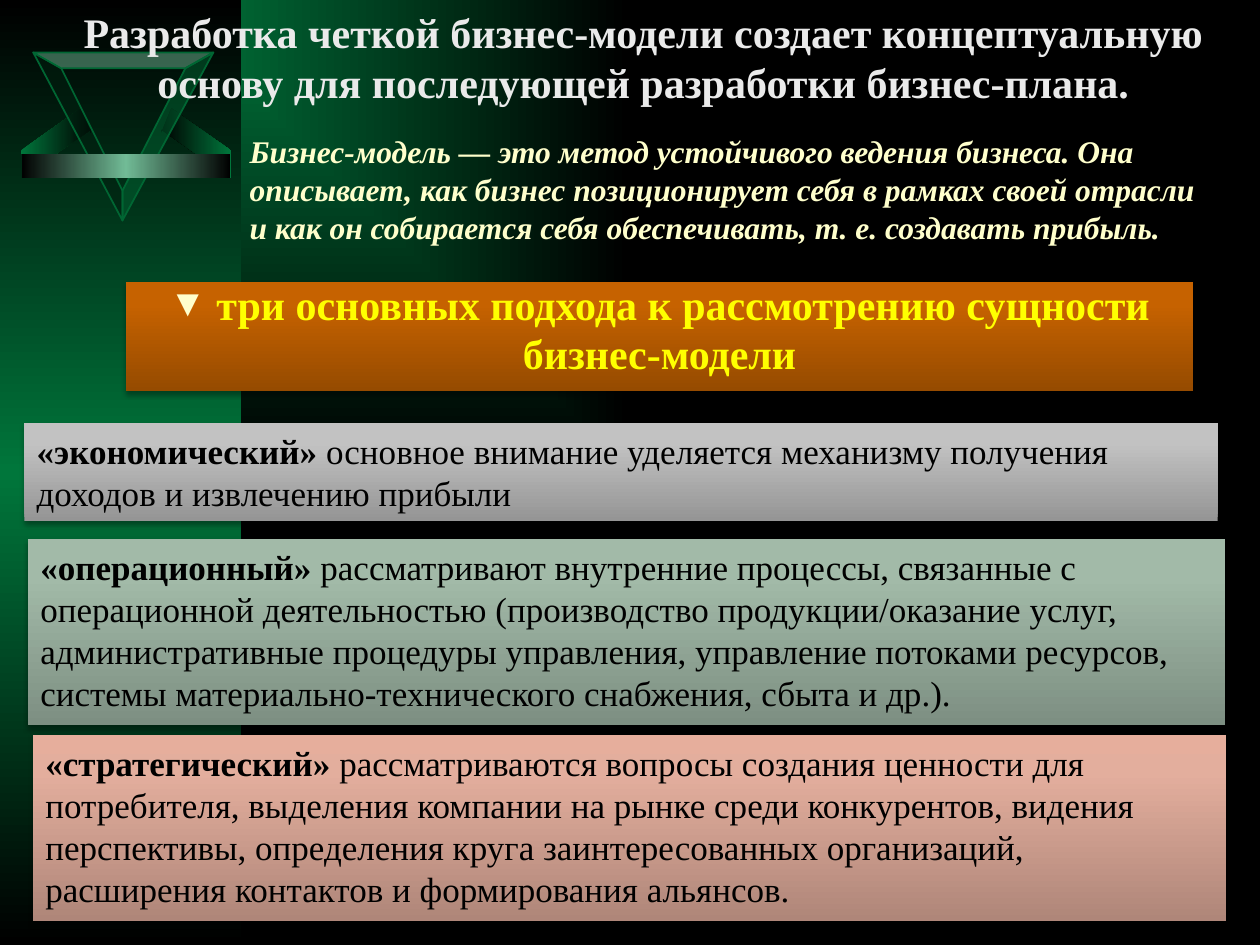
"""Build a slide on the three approaches to the essence of a business model."""
from dataclasses import dataclass
from typing import Optional

from lxml import etree
from pptx import Presentation
from pptx.dml.color import RGBColor
from pptx.enum.shapes import MSO_SHAPE
from pptx.enum.text import MSO_ANCHOR, MSO_AUTO_SIZE, PP_ALIGN
from pptx.oxml.ns import qn
from pptx.util import Pt

RECTANGLE = MSO_SHAPE.RECTANGLE
LEFT, CENTER = PP_ALIGN.LEFT, PP_ALIGN.CENTER
TOP, MIDDLE = MSO_ANCHOR.TOP, MSO_ANCHOR.MIDDLE
NO_FIT, GROW = MSO_AUTO_SIZE.NONE, MSO_AUTO_SIZE.SHAPE_TO_FIT_TEXT


@dataclass(frozen=True)
class Theme:
    font: str = "Times New Roman"
    heading_size: int = 24
    approach_size: int = 20
    definition_size: int = 18
    black: str = "000000"
    green: str = "00763B"
    mint: str = "71BB96"
    outline: str = "006633"
    deep_green: str = "002010"
    cream: str = "FFFFCC"
    yellow: str = "FFFF00"
    pale: str = "EAEAEA"
    orange: tuple = ((0, "964B00"), (80, "C66200"), (100, "C86400"))
    grey: tuple = ((0, "959595"), (80, "C2C2C2"), (100, "C3C3C3"))
    sage: tuple = ((0, "7D8F82"), (80, "A2BAA8"), (100, "A2BBA9"))
    salmon: tuple = ((0, "AF8679"), (80, "E3AE9D"), (100, "E6AE9C"))


@dataclass(frozen=True)
class Frame:
    left: float
    top: float
    width: float
    height: float

    def lengths(self) -> tuple:
        return tuple(Pt(v) for v in (self.left, self.top, self.width, self.height))


@dataclass(frozen=True)
class Approach:
    frame: Frame
    stops: tuple
    name: str
    description: str


THEME = Theme()
APPROACHES = (
    Approach(Frame(13.9, 241.9, 682, 55.7), THEME.grey, "«экономический»",
             " основное внимание уделяется механизму получения доходов и извлечению прибыли"),
    Approach(Frame(16, 308.2, 684, 106.3), THEME.sage, "«операционный»",
             " рассматривают внутренние процессы, связанные с операционной деятельностью "
             "(производство продукции/оказание услуг, административные процедуры управления, "
             "управление потоками ресурсов, системы материально-технического снабжения, "
             "сбыта и др.)."),
    Approach(Frame(18.8, 420, 682, 106.3), THEME.salmon, "«стратегический»",
             " рассматриваются вопросы создания ценности для потребителя, выделения компании "
             "на рынке среди конкурентов, видения перспективы, определения круга "
             "заинтересованных организаций, расширения контактов и формирования альянсов."),
)


def add_node(parent, tag: str, **attributes):
    return etree.SubElement(parent, qn(tag), {k: str(v) for k, v in attributes.items()})


def fill_gradient(fill, element, stops: tuple, angle: Optional[int] = None) -> None:
    """Fill with a linear gradient, or from the top left corner if no angle is given."""
    fill.gradient()
    gradient = next(element.iter(qn("a:gradFill")))
    for child in list(gradient):
        gradient.remove(child)
    stop_list = add_node(gradient, "a:gsLst")
    for position, color in stops:
        stop = add_node(stop_list, "a:gs", pos=position * 1000)
        add_node(stop, "a:srgbClr", val=color)
    if angle is None:
        corner = add_node(gradient, "a:path", path="rect")
        add_node(corner, "a:fillToRect", r=100000, b=100000)
    else:
        add_node(gradient, "a:lin", ang=angle * 60000, scaled=0)


def add_shadow(shape) -> None:
    shape.shadow.inherit = False
    effects = shape._element.spPr.find(qn("a:effectLst"))
    shadow = add_node(effects, "a:outerShdw", blurRad=Pt(3.1), dist=Pt(1.8),
                      dir=90 * 60000, rotWithShape=0)
    color = add_node(shadow, "a:srgbClr", val=THEME.black)
    add_node(color, "a:alpha", val=35000)


def add_text(para, text: str, *, size: int, color: str, bold: bool = True,
             italic: bool = False) -> None:
    span = para.add_run()
    span.text = text
    font = span.font
    font.name, font.size, font.bold, font.italic = THEME.font, Pt(size), bold, italic
    font.color.rgb = RGBColor.from_string(color)


def start_text(shape, *, align=LEFT, anchor=TOP, fit=NO_FIT):
    frame = shape.text_frame
    frame.word_wrap, frame.auto_size, frame.vertical_anchor = True, fit, anchor
    para = frame.paragraphs[0]
    para.alignment, para.space_before = align, Pt(0)
    return para


def place(slide, shape, frame: Frame) -> None:
    """Position a placeholder and bring it to the front."""
    shape.left, shape.top, shape.width, shape.height = frame.lengths()
    slide.shapes._spTree.append(shape._element)


def add_bar(slide, frame: Frame, stops: tuple, angle: int):
    bar = slide.shapes.add_shape(RECTANGLE, *frame.lengths())
    bar.shadow.inherit = False
    fill_gradient(bar.fill, bar._element, stops, angle)
    bar.line.fill.background()
    return bar


def add_outline(slide, points: tuple):
    builder = slide.shapes.build_freeform(*points[0], scale=Pt(1))
    builder.add_line_segments(points[1:], close=True)
    outline = builder.convert_to_shape()
    outline.shadow.inherit = False
    return outline


def mirror(points: tuple, total: float) -> tuple:
    return tuple((total - x, y) for x, y in points)


def add_emblem(slide) -> None:
    wing = ((12.2, 86.4), (12.2, 101.5), (51.8, 74.2), (51.8, 75.6), (46.1, 61.9))
    side = ((70.3, 126), (70.3, 109.4), (34.6, 38.9), (18.7, 29.5))
    right_side = mirror(side, 140.6)
    rim = (side[3], side[2], right_side[2], right_side[3])
    fade = ((0, THEME.black), (100, THEME.green))
    reverse_fade = ((0, THEME.green), (100, THEME.black))
    for points, stops in ((mirror(wing, 144), fade), (wing, reverse_fade)):
        outline = add_outline(slide, points)
        fill_gradient(outline.fill, outline._element, stops, 0)
        outline.line.fill.background()
    for points, color in ((side, THEME.deep_green), (rim, THEME.mint),
                          (right_side, THEME.outline)):
        outline = add_outline(slide, points)
        outline.fill.solid()
        outline.fill.fore_color.rgb = RGBColor.from_string(color)
        add_node(next(outline._element.spPr.iter(qn("a:srgbClr"))), "a:alpha", val=50000)
        outline.line.color.rgb = RGBColor.from_string(THEME.outline)
        outline.line.width = Pt(1)
    add_bar(slide, Frame(12.2, 87.8, 119.5, 13.7),
            ((0, THEME.black), (50, THEME.mint), (100, THEME.black)), 0)


def add_definition(slide) -> None:
    title = slide.shapes.title
    place(slide, title, Frame(135.4, 72, 558, 72))
    add_text(start_text(title, anchor=MIDDLE),
             "Бизнес-модель — это метод устойчивого ведения бизнеса. Она описывает, как бизнес "
             "позиционирует себя в рамках своей отрасли и как он собирается себя обеспечивать, "
             "т. е. создавать прибыль.",
             size=THEME.definition_size, color=THEME.cream, italic=True)


def add_banner(slide) -> None:
    body = slide.placeholders[1]
    place(slide, body, Frame(72, 161.3, 609.8, 61.9))
    fill_gradient(body.fill, body._element, THEME.orange, 270)
    add_shadow(body)
    first = start_text(body, align=CENTER)
    second = body.text_frame.add_paragraph()
    second.alignment, second.space_before = CENTER, Pt(4.8)
    for para, text in ((first, "три основных подхода к рассмотрению сущности"),
                       (second, "бизнес-модели")):
        para.line_spacing = 0.8
        properties = para._p.get_or_add_pPr()
        properties.set("marL", str(Pt(27)))
        properties.set("indent", str(Pt(-27)))
        if para is first:
            add_node(add_node(properties, "a:buClr"), "a:srgbClr", val=THEME.cream)
            add_node(properties, "a:buSzPct", val=90000)
            add_node(properties, "a:buChar", char="▼")
        else:
            add_node(properties, "a:buNone")
        add_text(para, text, size=THEME.heading_size, color=THEME.yellow)


def add_approach(slide, approach: Approach) -> None:
    box = add_bar(slide, approach.frame, approach.stops, 270)
    add_shadow(box)
    para = start_text(box, fit=GROW)
    for text, bold in ((approach.name, True), (approach.description, False)):
        add_text(para, text, size=THEME.approach_size, color=THEME.black, bold=bold)


def add_heading(slide) -> None:
    box = slide.shapes.add_textbox(*Frame(15.1, 0, 704.9, 64.8).lengths())
    add_text(start_text(box, align=CENTER, fit=GROW),
             "Разработка четкой бизнес-модели создает концептуальную основу для последующей "
             "разработки бизнес-плана.", size=THEME.heading_size, color=THEME.pale)


def main() -> None:
    deck = Presentation()
    deck.slide_width, deck.slide_height = Pt(720), Pt(540)
    slide = deck.slides.add_slide(deck.slide_layouts[1])
    fill_gradient(slide.background.fill, slide._element,
                  ((0, THEME.green), (100, THEME.black)))
    add_bar(slide, Frame(0, 0, 138, 540),
            ((0, THEME.black), (50, THEME.green), (100, THEME.black)), 90)
    add_emblem(slide)
    add_definition(slide)
    add_banner(slide)
    for approach in APPROACHES:
        add_approach(slide, approach)
    add_heading(slide)
    deck.save("out.pptx")


if __name__ == "__main__":
    main()
